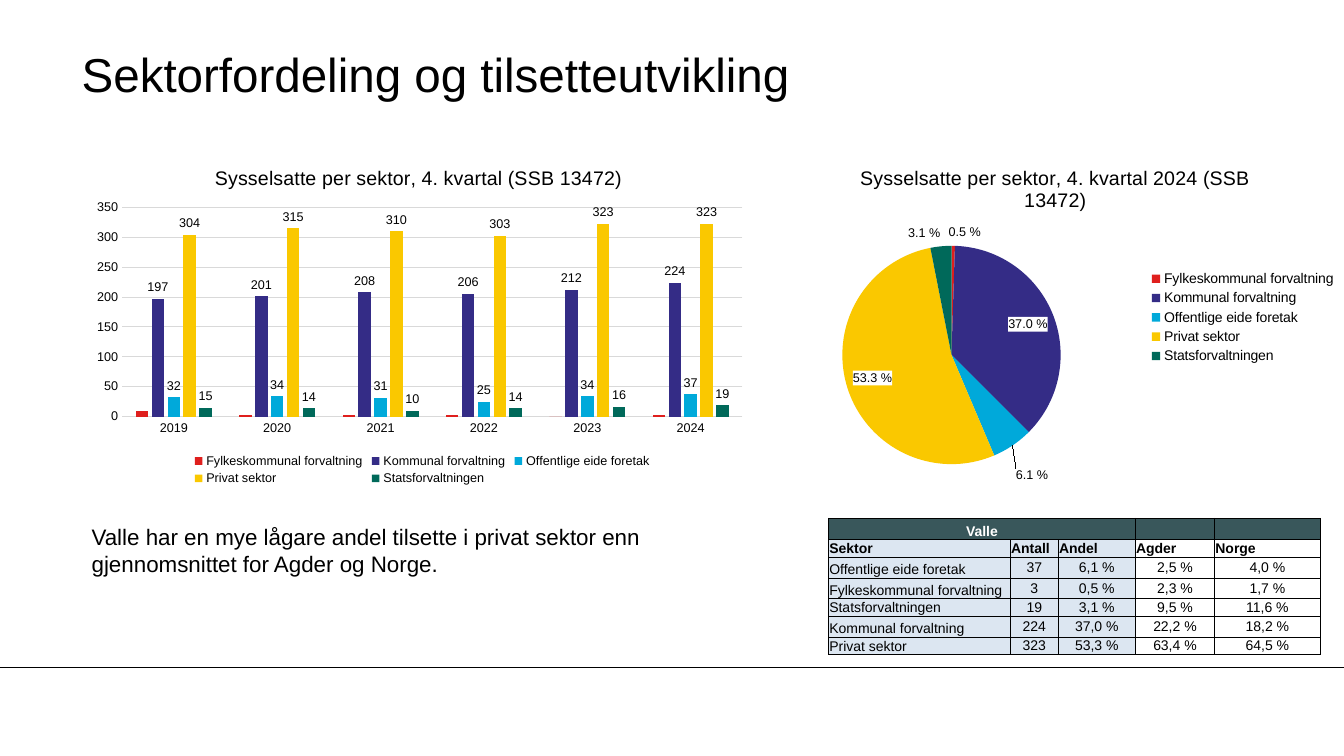
"""Build the slide on employment by sector in Valle."""
from lxml.etree import SubElement
from pptx import Presentation
from pptx.chart.data import CategoryChartData
from pptx.dml.color import RGBColor
from pptx.enum.chart import XL_CHART_TYPE, XL_LABEL_POSITION, XL_LEGEND_POSITION, XL_TICK_MARK
from pptx.enum.shapes import MSO_CONNECTOR
from pptx.enum.text import MSO_ANCHOR, PP_ALIGN
from pptx.oxml import parse_xml
from pptx.oxml.ns import nsdecls, qn
from pptx.util import Cm, Pt

FONT = "Arial"
BLACK = RGBColor(0x00, 0x00, 0x00)
WHITE = RGBColor(0xFF, 0xFF, 0xFF)
GRID = RGBColor(0xD9, 0xD9, 0xD9)
HEADER = RGBColor(0x39, 0x57, 0x5B)
PALE = RGBColor(0xDC, 0xE6, 0xF1)
RED = RGBColor(0xDF, 0x1F, 0x1D)
INDIGO = RGBColor(0x34, 0x2C, 0x86)
SKY = RGBColor(0x00, 0xA9, 0xDA)
YELLOW = RGBColor(0xFA, 0xC8, 0x00)
GREEN = RGBColor(0x00, 0x69, 0x5A)

TITLE = "Sektorfordeling og tilsetteutvikling"
COMMENT = ("Valle har en mye lågare andel tilsette i privat sektor enn "
           "gjennomsnittet for Agder og Norge.")
COLUMN_TITLE = "Sysselsatte per sektor, 4. kvartal (SSB 13472)"
PIE_TITLE = "Sysselsatte per sektor, 4. kvartal 2024 (SSB 13472)"
YEARS = ["2019", "2020", "2021", "2022", "2023", "2024"]
SECTORS = [
    ("Fylkeskommunal forvaltning", RED, (10, 3, 3, 3, 0, 3), 0.5),
    ("Kommunal forvaltning", INDIGO, (197, 201, 208, 206, 212, 224), 37),
    ("Offentlige eide foretak", SKY, (32, 34, 31, 25, 34, 37), 6.1),
    ("Privat sektor", YELLOW, (304, 315, 310, 303, 323, 323), 53.3),
    ("Statsforvaltningen", GREEN, (15, 14, 10, 14, 16, 19), 3.1),
]
PIE_LABELS = [("outEnd", 0.02, 0), ("inEnd", 0, 0), ("outEnd", 0, 0.05),
              ("inEnd", 0, 0), ("outEnd", 0, 0)]
TABLE = [
    ("Valle", "", "", "", ""),
    ("Sektor", "Antall", "Andel", "Agder", "Norge"),
    ("Offentlige eide foretak", "37", "6,1 %", "2,5 %", "4,0 %"),
    ("Fylkeskommunal forvaltning", "3", "0,5 %", "2,3 %", "1,7 %"),
    ("Statsforvaltningen", "19", "3,1 %", "9,5 %", "11,6 %"),
    ("Kommunal forvaltning", "224", "37,0 %", "22,2 %", "18,2 %"),
    ("Privat sektor", "323", "53,3 %", "63,4 %", "64,5 %"),
]
COLUMN_WIDTHS = [4.58, 1.21, 1.94, 2, 2.66]
ROW_HEIGHTS = [0.53, 0.33, 0.53, 0.51, 0.33, 0.53, 0.33]


def write(frame, text, size=10, color=BLACK, bold=False, align=PP_ALIGN.LEFT):
    para = frame.paragraphs[0]
    para.alignment = align
    if not text:
        SubElement(para._p, qn("a:endParaRPr"), sz=str(size * 100))
        return
    span = para.add_run()
    span.text = text
    font = span.font
    font.name, font.size, font.bold = FONT, Pt(size), bold
    font.color.rgb = color


def add_text(page, text, left, top, width, height, inset=None,
             anchor=MSO_ANCHOR.TOP, **style):
    frame = page.shapes.add_textbox(Cm(left), Cm(top), Cm(width), Cm(height)).text_frame
    frame.word_wrap = True
    frame.vertical_anchor = anchor
    if inset is not None:
        frame.margin_left = frame.margin_right = Cm(inset)
        frame.margin_top = frame.margin_bottom = Cm(inset)
    write(frame, text, **style)


def style_font(font, size):
    font.name, font.size, font.bold = FONT, Pt(size), False
    font.color.rgb = BLACK


def layout_xml(x, y, width, height, inner=False):
    target = '<c:layoutTarget val="inner"/>' if inner else ""
    return parse_xml(
        f'<c:layout {nsdecls("c")}><c:manualLayout>{target}'
        '<c:xMode val="edge"/><c:yMode val="edge"/>'
        f'<c:x val="{x}"/><c:y val="{y}"/><c:w val="{width}"/><c:h val="{height}"/>'
        '</c:manualLayout></c:layout>')


def add_chart(page, kind, data, place, title, legend_side, legend_size, plot_area, legend_area):
    chart = page.shapes.add_chart(kind, *map(Cm, place), data).chart
    style_font(chart.font, 10)
    chart.has_title = True
    write(chart.chart_title.text_frame, title, size=14, align=PP_ALIGN.CENTER)
    chart.chart_title.include_in_layout = False
    chart.has_legend = True
    chart.legend.position = legend_side
    chart.legend.include_in_layout = False
    style_font(chart.legend.font, legend_size)
    plot = chart._chartSpace.chart.plotArea
    for old in plot.findall(qn("c:layout")):
        plot.remove(old)
    plot.insert(0, layout_xml(*plot_area, inner=True))
    legend = chart.legend._element
    for old in legend.findall(qn("c:layout")):
        legend.remove(old)
    legend.find(qn("c:legendPos")).addnext(layout_xml(*legend_area))
    return chart


def add_columns(page):
    data = CategoryChartData(number_format="#,##0")
    data.categories = YEARS
    for name, _, counts, _ in SECTORS:
        data.add_series(name, counts)
    chart = add_chart(page, XL_CHART_TYPE.COLUMN_CLUSTERED, data, (2.06, 3.76, 16.99, 8.64),
                      COLUMN_TITLE, XL_LEGEND_POSITION.BOTTOM, 9,
                      (0.06, 0.17, 0.92, 0.61), (0.16, 0.88, 0.69, 0.11))
    plot = chart.plots[0]
    plot.gap_width, plot.overlap, plot.vary_by_categories = 219, -27, False
    for axis in (chart.category_axis, chart.value_axis):
        axis.major_tick_mark = axis.minor_tick_mark = XL_TICK_MARK.NONE
        style_font(axis.tick_labels.font, 9)
    chart.value_axis.format.line.fill.background()
    grid = chart.value_axis.major_gridlines
    for line in (chart.category_axis.format.line, grid.format.line):
        line.color.rgb, line.width = GRID, Pt(0.75)
    for series, (_, color, _, _) in zip(plot.series, SECTORS):
        series.format.fill.solid()
        series.format.fill.fore_color.rgb = color
        if color != RED:
            labels = series.data_labels
            labels.show_value = True
            labels.number_format, labels.number_format_is_linked = "#,##0", False
            labels.position = XL_LABEL_POSITION.OUTSIDE_END
            style_font(labels.font, 9)


def pie_label(index, position, x, y):
    move = (f'<c:layout><c:manualLayout><c:x val="{x}"/><c:y val="{y}"/>'
            '</c:manualLayout></c:layout>') if x or y else ""
    fill = f'<a:solidFill><a:srgbClr val="{WHITE}"/></a:solidFill>'
    return parse_xml(
        f'<c:dLbl {nsdecls("c", "a")}><c:idx val="{index}"/>{move}'
        r'<c:numFmt formatCode="0.0\ %" sourceLinked="0"/>'
        f'<c:spPr>{fill}</c:spPr><c:txPr><a:bodyPr/><a:p><a:pPr><a:defRPr sz="900">'
        f'<a:solidFill><a:srgbClr val="{BLACK}"/></a:solidFill><a:latin typeface="{FONT}"/>'
        '</a:defRPr></a:pPr><a:endParaRPr lang="nb-NO"/></a:p></c:txPr>'
        f'<c:dLblPos val="{position}"/><c:showLegendKey val="0"/><c:showVal val="0"/>'
        '<c:showCatName val="0"/><c:showSerName val="0"/><c:showPercent val="1"/>'
        '<c:showBubbleSize val="0"/></c:dLbl>')


def add_pie(page):
    data = CategoryChartData()
    data.categories = [name for name, *_ in SECTORS]
    data.add_series("Series 1", [share for *_, share in SECTORS])
    chart = add_chart(page, XL_CHART_TYPE.PIE, data, (19.33, 3.76, 14.53, 9.02),
                      PIE_TITLE, XL_LEGEND_POSITION.RIGHT, 10,
                      (0.12, 0.27, 0.4, 0.61), (0.66, 0.33, 0.33, 0.28))
    series = chart.plots[0].series[0]
    labels = series.data_labels
    labels.show_value, labels.show_percentage = False, True
    labels.number_format, labels.number_format_is_linked = r"0.0\ %", False
    style_font(labels.font, 9)
    for index, (_, color, _, _) in enumerate(SECTORS):
        fill = series.points[index].format.fill
        fill.solid()
        fill.fore_color.rgb = color
        labels._element.insert(index, pie_label(index, *PIE_LABELS[index]))


def add_borders(cell):
    properties = cell._tc.get_or_add_tcPr()
    for index, side in enumerate("LRTB"):
        properties.insert(index, parse_xml(
            f'<a:ln{side} {nsdecls("a")} w="6350"><a:solidFill>'
            f'<a:srgbClr val="{BLACK}"/></a:solidFill></a:ln{side}>'))


def add_sector_table(page):
    table = page.shapes.add_table(len(TABLE), len(COLUMN_WIDTHS), Cm(20.88), Cm(13.06),
                                  Cm(sum(COLUMN_WIDTHS)), Cm(sum(ROW_HEIGHTS))).table
    for column, width in zip(table.columns, COLUMN_WIDTHS):
        column.width = Cm(width)
    for row, height in zip(table.rows, ROW_HEIGHTS):
        row.height = Cm(height)
    table.cell(0, 0).merge(table.cell(0, 2))
    for r, values in enumerate(TABLE):
        for c, value in enumerate(values):
            cell = table.cell(r, c)
            number = r > 1 and c > 0
            cell.margin_left = cell.margin_right = cell.margin_top = Cm(0.02)
            cell.margin_bottom = 0
            cell.vertical_anchor = MSO_ANCHOR.MIDDLE if number else MSO_ANCHOR.BOTTOM
            if r and c > 2:
                cell.fill.background()
            else:
                cell.fill.solid()
                cell.fill.fore_color.rgb = PALE if r else HEADER
            add_borders(cell)
            write(cell.text_frame, value, color=BLACK if r else WHITE, bold=r < 2,
                  align=PP_ALIGN.CENTER if number or r == 0 else PP_ALIGN.LEFT)


def main():
    deck = Presentation()
    deck.slide_width, deck.slide_height = Cm(33.87), Cm(19.05)
    page = deck.slides.add_slide(deck.slide_layouts[6])
    rule = page.shapes.add_connector(MSO_CONNECTOR.STRAIGHT, 0, Cm(16.81), Cm(33.87), Cm(16.81))
    rule.line.color.rgb, rule.line.width = BLACK, Pt(0.75)
    SubElement(rule._element.spPr, qn("a:effectLst"))
    add_text(page, TITLE, 2.06, 0.89, 28.19, 1.9, inset=0, anchor=MSO_ANCHOR.MIDDLE, size=34)
    add_text(page, COMMENT, 2.06, 13.06, 16.28, 1.63, size=16)
    add_sector_table(page)
    add_columns(page)
    add_pie(page)
    deck.save("out.pptx")


if __name__ == "__main__":
    main()
